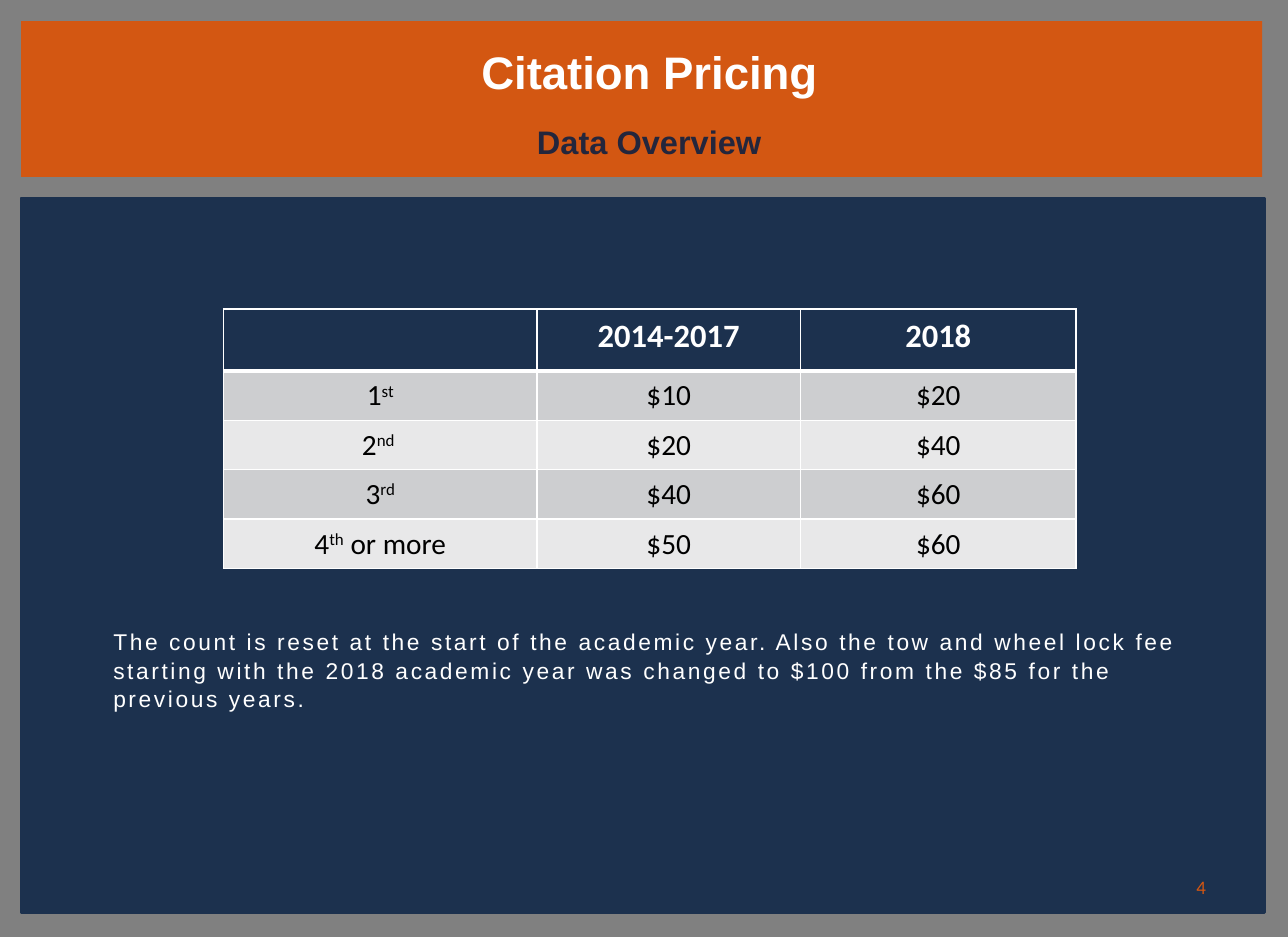
"""Build the citation pricing slide with its fee table."""
from dataclasses import dataclass

from lxml import etree
from pptx import Presentation
from pptx.dml.color import RGBColor
from pptx.enum.shapes import MSO_SHAPE
from pptx.enum.text import MSO_ANCHOR, PP_ALIGN
from pptx.oxml.ns import qn
from pptx.util import Pt

RECT = MSO_SHAPE.RECTANGLE
TOP, MIDDLE = MSO_ANCHOR.TOP, MSO_ANCHOR.MIDDLE
LEFT, CENTER = PP_ALIGN.LEFT, PP_ALIGN.CENTER

GRAY = RGBColor(0x80, 0x80, 0x80)
NAVY = RGBColor(0x1C, 0x31, 0x4E)
ORANGE = RGBColor(0xD3, 0x57, 0x12)
INK = RGBColor(0x24, 0x26, 0x3C)
WHITE = RGBColor(0xFF, 0xFF, 0xFF)
BLACK = RGBColor(0, 0, 0)
BANDS = (RGBColor(0xCD, 0xCE, 0xD0), RGBColor(0xE8, 0xE8, 0xE9))


@dataclass(frozen=True)
class Box:
    left: float
    top: float
    width: float
    height: float

    def size(self) -> tuple:
        return Pt(self.left), Pt(self.top), Pt(self.width), Pt(self.height)


@dataclass(frozen=True)
class Style:
    font: str
    size: float
    color: RGBColor
    bold: bool = False


@dataclass(frozen=True)
class Panel:
    box: Box
    color: RGBColor
    line: float = 0


@dataclass(frozen=True)
class Line:
    text: str
    style: Style
    align: PP_ALIGN = CENTER
    before: float = 0
    space: float = 1
    indent: float = 0
    track: int = 0


@dataclass(frozen=True)
class Label:
    box: Box
    lines: tuple[Line, ...]
    anchor: MSO_ANCHOR = TOP


HEAD = Style("Calibri", 20, WHITE, True)
CELL = Style("Calibri", 18, BLACK)

PANELS = (
    Panel(Box(13, 121.7, 764.6, 439.2), NAVY, 1.5),
    Panel(Box(13, 13, 763.2, 95.8), ORANGE),
)
NOTE = (
    "The count is reset at the start of the academic year. Also the tow and "
    "wheel lock fee starting with the 2018 academic year was changed to $100 "
    "from the $85 for the previous years."
)
LABELS = (
    Label(Box(713.5, 533.5, 50.4, 23),
          (Line("4", Style("Calibri", 11.7, ORANGE)),), MIDDLE),
    Label(Box(287.3, 23.3, 223.9, 84),
          (Line("Citation Pricing", Style("Arial", 28, WHITE, True)),
           Line("Data Overview", Style("Arial", 20, INK, True), before=14.5))),
    Label(Box(39.6, 381.6, 720, 128),
          (Line(NOTE, Style("Arial", 14, WHITE), LEFT,
                space=1.05, indent=23, track=160),)),
)

GRID = Box(137.5, 190, 524.2, 159.6)
COLS = (192.6, 162.2, 169.4)
HIGH, LOW = 38, 30.4
ROWS = (
    ("", "2014-2017", "2018"),
    ("1^st", "$10", "$20"),
    ("2^nd ", "$20", "$40"),
    ("3^rd", "$40", "$60"),
    ("4^th^ or more", "$50", "$60"),
)


def add_run(para, text: str, style: Style, raised: bool = False, track: int = 0) -> None:
    run = para.add_run()
    run.text = text
    font = run.font
    font.name, font.size, font.bold = style.font, Pt(style.size), style.bold
    font.color.rgb = style.color
    props = run._r.get_or_add_rPr()
    if raised:
        props.set("baseline", "30000")
    if track:
        props.set("spc", str(track))


def add_panel(slide, panel: Panel) -> None:
    shape = slide.shapes.add_shape(RECT, *panel.box.size())
    shape.shadow.inherit = False
    shape.fill.solid()
    shape.fill.fore_color.rgb = panel.color
    if panel.line:
        shape.line.color.rgb = panel.color
        shape.line.width = Pt(panel.line)
    else:
        shape.line.fill.background()


def add_label(slide, label: Label) -> None:
    frame = slide.shapes.add_textbox(*label.box.size()).text_frame
    frame.word_wrap = True
    frame.vertical_anchor = label.anchor
    for i, line in enumerate(label.lines):
        para = frame.add_paragraph() if i else frame.paragraphs[0]
        para.alignment = line.align
        para.space_before = Pt(line.before)
        para.line_spacing = line.space
        if line.indent:
            para._p.get_or_add_pPr().set("marL", str(Pt(line.indent)))
        add_run(para, line.text, line.style, track=line.track)


def add_edges(cell, top: float, base: float) -> None:
    props = cell._tc.get_or_add_tcPr()
    edges = (("a:lnL", 1), ("a:lnR", 1), ("a:lnT", top), ("a:lnB", base))
    for i, (tag, width) in enumerate(edges):
        edge = etree.Element(qn(tag), w=str(Pt(width)))
        fill = etree.SubElement(edge, qn("a:solidFill"))
        etree.SubElement(fill, qn("a:srgbClr"), val=str(WHITE))
        props.insert(i, edge)


def fill_cell(cell, text: str, row: int) -> None:
    cell.margin_left = cell.margin_right = Pt(8.64)
    cell.margin_top = cell.margin_bottom = Pt(4.32)
    cell.fill.solid()
    cell.fill.fore_color.rgb = BANDS[(row - 1) % 2] if row else NAVY
    add_edges(cell, 3 if row == 1 else 1, 1 if row else 3)
    para = cell.text_frame.paragraphs[0]
    para.alignment = CENTER
    for i, part in enumerate(text.split("^")):
        if part:
            add_run(para, part, CELL if row else HEAD, raised=i % 2 == 1)


def add_grid(slide) -> None:
    table = slide.shapes.add_table(len(ROWS), len(COLS), *GRID.size()).table
    table.horz_banding = False
    for col, width in zip(table.columns, COLS):
        col.width = Pt(width)
    for r, texts in enumerate(ROWS):
        table.rows[r].height = Pt(LOW if r else HIGH)
        for c, text in enumerate(texts):
            fill_cell(table.cell(r, c), text, r)


def main() -> None:
    deck = Presentation()
    deck.slide_width, deck.slide_height = Pt(792), Pt(576)
    slide = deck.slides.add_slide(deck.slide_layouts[6])
    slide.background.fill.solid()
    slide.background.fill.fore_color.rgb = GRAY
    for panel in PANELS:
        add_panel(slide, panel)
    for label in LABELS:
        add_label(slide, label)
    add_grid(slide)
    deck.save("out.pptx")


if __name__ == "__main__":
    main()
